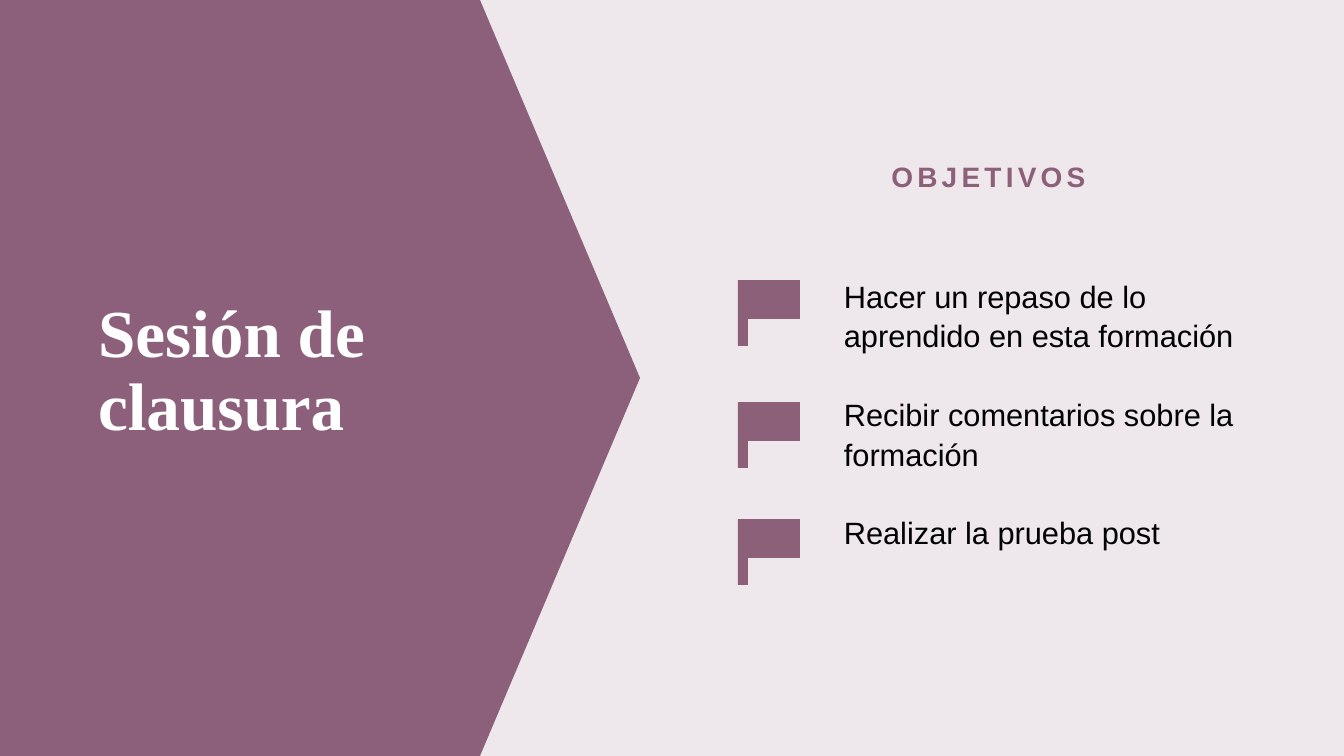
import pptx
import pptx.dml.color
import pptx.enum.shapes
import pptx.enum.text
import pptx.util

RGBColor = pptx.dml.color.RGBColor
MSO_SHAPE = pptx.enum.shapes.MSO_SHAPE
PP_ALIGN = pptx.enum.text.PP_ALIGN
MSO_ANCHOR = pptx.enum.text.MSO_ANCHOR

PANEL = RGBColor(0x8C, 0x5F, 0x7A)
ACCENT = RGBColor(0x8D, 0x60, 0x7A)
BACKGROUND = RGBColor(0xEE, 0xE7, 0xEB)
WHITE = RGBColor(0xFF, 0xFF, 0xFF)
BLACK = RGBColor(0x00, 0x00, 0x00)

EMU_PER_PX = 914400 / 100.8
OBJECTIVES = [
    "Hacer un repaso de lo aprendido en esta formación",
    "Recibir comentarios sobre la formación",
    "Realizar la prueba post",
]
FLAG_TOPS = [280, 402, 519]


def px(n):
    return pptx.util.Emu(round(n * EMU_PER_PX))


def write_text(tf, paragraphs, size, color, font="Arial", bold=False,
               align=PP_ALIGN.LEFT, anchor=MSO_ANCHOR.TOP,
               line_spacing=1.0, gap=0, tracking=0):
    tf.word_wrap = True
    tf.auto_size = pptx.enum.text.MSO_AUTO_SIZE.NONE
    tf.vertical_anchor = anchor
    for i, text in enumerate(paragraphs):
        p = tf.paragraphs[0] if i == 0 else tf.add_paragraph()
        p.alignment = align
        p.line_spacing = line_spacing
        p.space_before = pptx.util.Pt(gap if i else 0)
        r = p.add_run()
        r.text = text
        r.font.name = font
        r.font.size = pptx.util.Pt(size)
        r.font.bold = bold
        r.font.color.rgb = color
        if tracking:
            r.font._element.set("spc", str(tracking * 100))


def add_text(slide, box, paragraphs, **text_format):
    sp = slide.shapes.add_textbox(*map(px, box))
    write_text(sp.text_frame, paragraphs, **text_format)


def add_block(shapes, kind, box, color):
    sp = shapes.add_shape(kind, *map(px, box))
    sp.shadow.inherit = False
    sp.fill.solid()
    sp.fill.fore_color.rgb = color
    sp.line.fill.background()
    return sp


def add_flag(slide, left, top):
    flag = slide.shapes.add_group_shape()
    add_block(flag.shapes, MSO_SHAPE.RECTANGLE, (left, top, 10, 66), ACCENT)
    add_block(flag.shapes, MSO_SHAPE.RECTANGLE, (left + 6, top, 56, 39), ACCENT)


def add_title(slide, box, text, **text_format):
    title = slide.shapes.title
    title.left, title.top, title.width, title.height = map(px, box)
    write_text(title.text_frame, [text], **text_format)


def main():
    prs = pptx.Presentation()
    prs.slide_width, prs.slide_height = px(1344), px(756)
    slide = prs.slides.add_slide(prs.slide_layouts[5])
    slide.background.fill.solid()
    slide.background.fill.fore_color.rgb = BACKGROUND

    # Arrow panel, placed behind the title
    panel = add_block(slide.shapes, MSO_SHAPE.PENTAGON, (0, 0, 640, 756), PANEL)
    panel.adjustments[0] = 0.25
    slide.shapes.title._element.addprevious(panel._element)

    # Title
    add_title(slide, (88, 342, 442, 61), "Sesión de clausura", size=48,
              color=WHITE, font="Times New Roman", bold=True,
              anchor=MSO_ANCHOR.MIDDLE, line_spacing=0.9)

    # Objectives
    add_text(slide, (738, 155, 501, 44), ["OBJETIVOS"], size=20, color=ACCENT,
             bold=True, align=PP_ALIGN.CENTER, tracking=3)
    add_text(slide, (834, 270, 423, 289), OBJECTIVES, size=22, color=BLACK,
             line_spacing=1.07, gap=28)

    # Flag markers
    for top in FLAG_TOPS:
        add_flag(slide, 738, top)

    prs.save("out.pptx")


if __name__ == "__main__":
    main()
